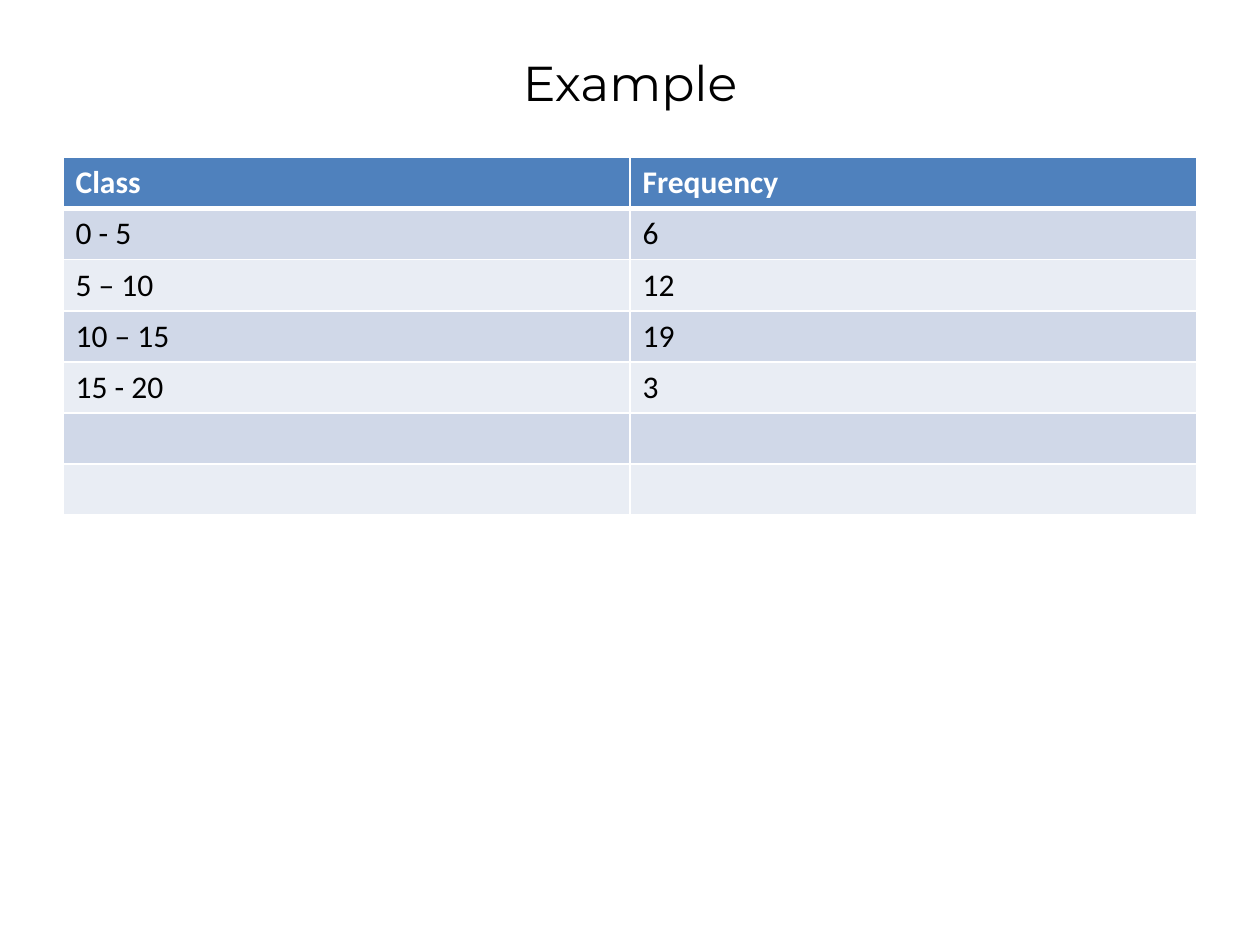
from lxml import etree
from pptx import Presentation
from pptx.dml.color import RGBColor
from pptx.enum.text import MSO_ANCHOR, PP_ALIGN
from pptx.oxml.ns import qn
from pptx.util import Inches, Pt

CENTER = PP_ALIGN.CENTER
MIDDLE = MSO_ANCHOR.MIDDLE
TITLE_ONLY_LAYOUT = 5

WHITE, BLACK = "FFFFFF", "000000"
HEADER_FILL = "4F81BD"
BAND_FILLS = ("D0D8E8", "E9EDF4")

FREQUENCIES = [
    ("Class", "Frequency"),
    ("0 - 5", "6"),
    ("5 – 10", "12"),
    ("10 – 15", "19"),
    ("15 - 20", "3"),
    ("", ""),
    ("", ""),
]


def color(hex_value):
    return RGBColor.from_string(hex_value)


def add_run(paragraph, text, font_name, size, hex_value, bold=False):
    run = paragraph.add_run()
    run.text = text
    run.font.name = font_name
    run.font.size = Pt(size)
    run.font.bold = bold
    run.font.color.rgb = color(hex_value)


def add_border(cell, side, width):
    properties = cell._tc.get_or_add_tcPr()
    line = etree.SubElement(properties, qn(f"a:ln{side}"), w=str(Pt(width)))
    fill = etree.SubElement(line, qn("a:solidFill"))
    etree.SubElement(fill, qn("a:srgbClr"), val=WHITE)


def place_title(slide, left, top, width, height):
    title = slide.shapes.title
    title.left, title.top, title.width, title.height = left, top, width, height
    title.text_frame.vertical_anchor = MIDDLE
    paragraph = title.text_frame.paragraphs[0]
    paragraph.alignment = CENTER
    add_run(paragraph, "Example", "Montserrat", 28, BLACK)


def style_cell(cell, text, row_index):
    is_header = row_index == 0
    # Borders come before the fill; a thick rule lies under the header
    add_border(cell, "L", 1)
    add_border(cell, "R", 1)
    add_border(cell, "T", 3 if row_index == 1 else 1)
    add_border(cell, "B", 3 if is_header else 1)
    cell.fill.solid()
    cell.fill.fore_color.rgb = color(
        HEADER_FILL if is_header else BAND_FILLS[(row_index - 1) % 2]
    )
    if text:
        add_run(cell.text_frame.paragraphs[0], text, "Calibri", 18,
                WHITE if is_header else BLACK, bold=is_header)


def place_frequency_table(slide, left, top, width, height):
    table = slide.shapes.add_table(
        len(FREQUENCIES), len(FREQUENCIES[0]), left, top, width, height
    ).table
    for row_index, values in enumerate(FREQUENCIES):
        for column_index, text in enumerate(values):
            style_cell(table.cell(row_index, column_index), text, row_index)


def main():
    presentation = Presentation()
    presentation.slide_width = Inches(10)
    presentation.slide_height = Inches(7.5)
    slide = presentation.slides.add_slide(
        presentation.slide_layouts[TITLE_ONLY_LAYOUT]
    )

    # Title and table share the same side margins
    left, width = Inches(0.5), Inches(9)
    place_title(slide, left, Inches(0.3), width, Inches(0.7))
    place_frequency_table(slide, left, Inches(1.25), width, Inches(2.84))

    presentation.save("out.pptx")


if __name__ == "__main__":
    main()
